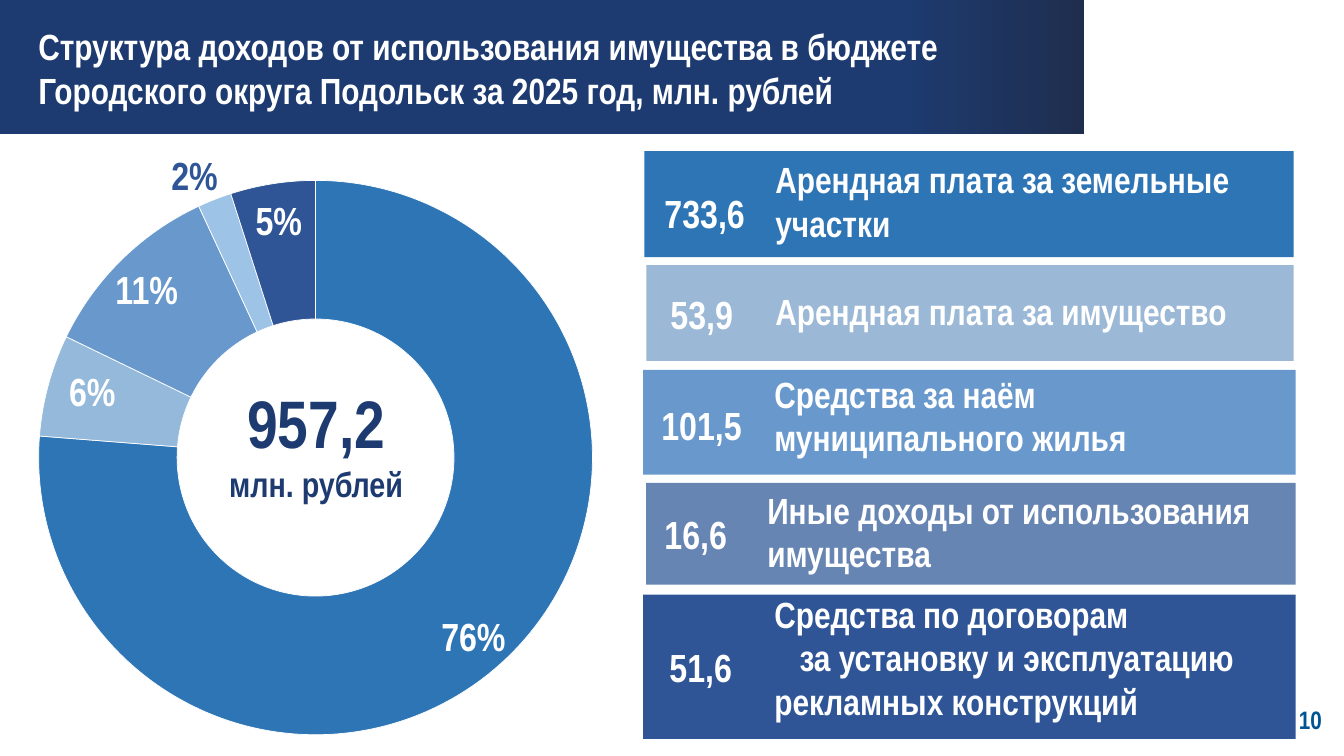
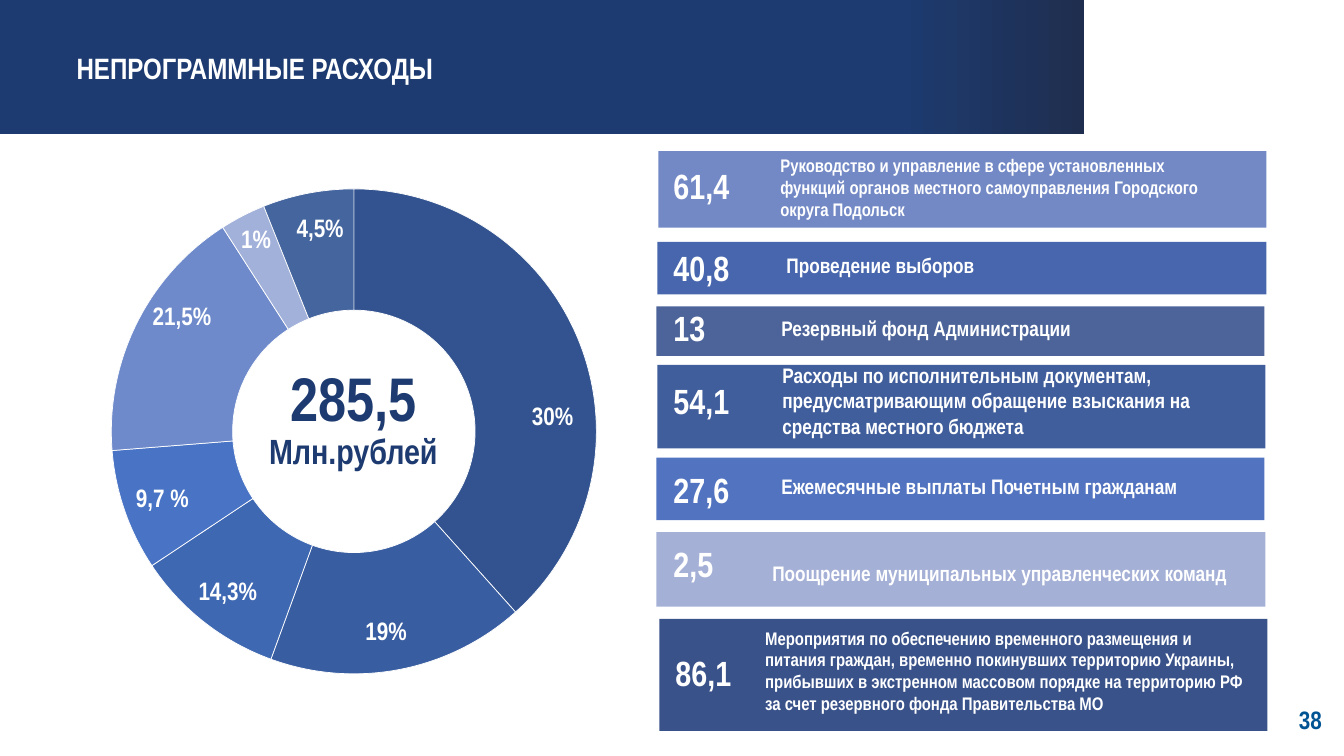
from dataclasses import dataclass

from lxml.etree import SubElement
from pptx import Presentation
from pptx.chart.data import CategoryChartData
from pptx.dml.color import RGBColor
from pptx.enum.chart import XL_CHART_TYPE
from pptx.enum.shapes import MSO_SHAPE
from pptx.enum.text import PP_ALIGN
from pptx.oxml.ns import qn
from pptx.util import Emu, Pt

PX = 9144


@dataclass(frozen=True)
class Theme:
    font: str = "Arial Narrow"
    chart_font: str = "Calibri"
    white: str = "FFFFFF"
    navy: str = "1D3B70"
    band_end: str = "1F2E4F"
    page_number: str = "005493"
    accent: str = "2F5597"
    page_size: int = 18
    unit_size: int = 25
    chart_size: int = 10


THEME = Theme()

INCOME = {
    "page": "10",
    "title": ("Структура доходов от использования имущества в бюджете "
              "Городского округа Подольск за 2025 год, млн. рублей",
              (33, 19, 969, 98), 26),
    "chart_box": (38, 147, 550, 614),
    "plot": (0, 0, 1, 1),
    "slices": [(77, "2E75B6"), (6, "94B9DA"), (11, "6999CC"),
               (2, "9DC3E6"), (5, "2F5597")],
    "total": ("957,2", (146, 373, 335, 91), 48),
    "unit": ("млн. рублей", (146, 454, 335, 52)),
    "share_size": 28,
    "shares": [
        ("76%", (420, 603, 99, 57), THEME.white),
        ("6%", (51, 359, 81, 57), THEME.white),
        ("11%", (97, 258, 97, 57), THEME.white),
        ("2%", (145, 145, 96, 57), THEME.accent),
        ("5%", (236, 190, 81, 57), THEME.white),
    ],
    "value_size": 28,
    "bars": [
        ((639, 150, 644, 105), "2E75B6", "733,6", (654, 183),
         [("Арендная плата за земельные участки", 0)], (764, 151, 517, 98), 26),
        ((641, 263, 642, 95), "9BB8D6", "53,9", (660, 283),
         [("Арендная плата за имущество", 0)], (764, 282, 477, 54), 26),
        ((638, 367, 647, 104), "6999CC", "101,5", (651, 393),
         [("Средства за наём муниципального жилья", 0)], (763, 364, 522, 98), 26),
        ((641, 479, 644, 101), "6685B3", "16,6", (654, 501),
         [("Иные доходы от использования", 0), ("имущества", 0)],
         (756, 479, 565, 98), 26),
        ((638, 590, 647, 143), "2F5597", "51,6", (659, 633),
         [("Средства по договорам", 0),
          ("за установку и эксплуатацию рекламных конструкций", 25)],
         (763, 582, 510, 141), 26),
    ],
}

EXPENSES = {
    "page": "38",
    "title": ("НЕПРОГРАММНЫЕ РАСХОДЫ", (71, 45, 950, 45), 21),
    "chart_box": (108, 185, 486, 486),
    "plot": (0.005, 0.005, 0.99, 0.99),
    "slices": [(38, "32538F"), (17, "385DA1"), (10, "3E68B2"), (8, "4974C5"),
               (17, "6E8ACB"), (3, "A2B1DA"), (6, "45659E")],
    "total": ("285,5", (183, 352, 335, 84), 44),
    "unit": ("Млн.рублей", (183, 421, 335, 49)),
    "share_size": 18,
    "shares": [
        ("30%", (508, 392, 80, 40), THEME.white),
        ("19%", (333, 606, 100, 40), THEME.white),
        ("14,3%", (183, 566, 86, 40), THEME.white),
        ("9,7 %", (121, 474, 80, 40), THEME.white),
        ("21,5%", (108, 293, 145, 40), THEME.white),
        ("1%", (212, 217, 84, 40), THEME.white),
        ("4,5%", (277, 206, 81, 40), THEME.white),
    ],
    "value_size": 25,
    "bars": [
        ((653, 150, 603, 76), "7389C6", "61,4", (663, 158),
         [("Руководство и управление в сфере установленных функций органов "
           "местного самоуправления Городского округа Подольск", 0)],
         (769, 148, 459, 67), 13),
        ((652, 240, 604, 52), "4766AD", "40,8", (663, 240),
         [("Проведение выборов", 0)], (775, 246, 458, 35), 15),
        ((651, 304, 603, 49), "4C649A", "13", (663, 299),
         [("Резервный фонд Администрации", 0)], (770, 308, 448, 39), 15),
        ((652, 362, 603, 83), "405D9C", "54,1", (663, 372),
         [("Расходы по исполнительным документам, предусматривающим "
           "обращение взыскания на средства местного бюджета", 0)],
         (771, 355, 467, 60), 15),
        ((651, 454, 603, 62), "5273BF", "27,6", (663, 460),
         [("Ежемесячные выплаты Почетным гражданам", 0)],
         (770, 465, 474, 38), 15),
        ((651, 528, 604, 74), "A5B0D7", "2,5", (663, 533),
         [("Поощрение муниципальных управленческих команд", 0)],
         (761, 551, 464, 35), 15),
        ((654, 614, 603, 111), "39528A", "86,1", (665, 641),
         [("Мероприятия по обеспечению временного размещения и питания "
           "граждан, временно покинувших территорию Украины, прибывших в "
           "экстренном массовом порядке на территорию РФ за счет резервного "
           "фонда Правительства МО", 0)], (754, 617, 483, 69), 13),
    ],
}


def emu(box):
    return [Emu(length * PX) for length in box]


def color(value):
    return RGBColor.from_string(value)


def add_text(slide, paragraphs, box, size, fill=THEME.white,
             align=PP_ALIGN.LEFT, wrap=True):
    frame = slide.shapes.add_textbox(*emu(box)).text_frame
    frame.word_wrap = wrap
    frame.margin_left = frame.margin_right = Emu(5 * PX)
    frame.margin_top = frame.margin_bottom = Emu(5 * PX)
    for index, (text, indent) in enumerate(paragraphs):
        paragraph = frame.add_paragraph() if index else frame.paragraphs[0]
        paragraph.alignment = align
        if indent:
            paragraph._p.get_or_add_pPr().set("indent", str(indent * PX))
        run = paragraph.add_run()
        run.text = text
        run.font.name = THEME.font
        run.font.size = Pt(size)
        run.font.bold = True
        run.font.color.rgb = color(fill)


def add_rectangle(slide, box):
    shape = slide.shapes.add_shape(MSO_SHAPE.RECTANGLE, *emu(box))
    shape.shadow.inherit = False
    shape.line.fill.background()
    return shape


def add_frame(slide, content):
    band = add_rectangle(slide, (0, 0, 1075, 133))
    band.fill.gradient()
    band.fill.gradient_angle = 0
    stops = ((THEME.navy, 0.83), (THEME.band_end, 1))
    for stop, (value, position) in zip(band.fill.gradient_stops, stops):
        stop.color.rgb = color(value)
        stop.position = position
    title, box, size = content["title"]
    add_text(slide, [(title, 0)], box, size)
    add_text(slide, [(content["page"], 0)], (1282, 694, 34, 39),
             THEME.page_size, THEME.page_number, PP_ALIGN.RIGHT, wrap=False)


def set_plot_layout(chart, plot_box):
    plot_area = chart.element.find(".//" + qn("c:plotArea"))
    for old in plot_area.findall(qn("c:layout")):
        plot_area.remove(old)
    layout = SubElement(plot_area, qn("c:layout"))
    plot_area.insert(0, layout)
    manual = SubElement(layout, qn("c:manualLayout"))
    settings = [("layoutTarget", "inner"), ("xMode", "edge"), ("yMode", "edge")]
    settings += zip("xywh", plot_box)
    for name, value in settings:
        SubElement(manual, qn("c:" + name)).set("val", str(value))
    chart.element.find(".//" + qn("c:holeSize")).set("val", "70")


def add_doughnut(slide, content):
    slices = content["slices"]
    data = CategoryChartData()
    data.categories = [str(number + 1) for number in range(len(slices))]
    data.add_series("Series 1", [value for value, _ in slices])
    chart = slide.shapes.add_chart(
        XL_CHART_TYPE.DOUGHNUT, *emu(content["chart_box"]), data).chart
    chart.has_legend = False
    chart.has_title = False
    chart.font.name = THEME.chart_font
    chart.font.size = Pt(THEME.chart_size)
    chart.font.color.rgb = color(THEME.white)
    plot = chart.plots[0]
    plot.has_data_labels = False
    plot.vary_by_categories = False
    for index, (_, fill) in enumerate(slices):
        style = plot.series[0].points[index].format
        style.fill.solid()
        style.fill.fore_color.rgb = color(fill)
        style.line.color.rgb = color(THEME.white)
        style.line.width = Pt(0.5)
    set_plot_layout(chart, content["plot"])

    total, box, size = content["total"]
    add_text(slide, [(total, 0)], box, size, THEME.navy, PP_ALIGN.CENTER)
    unit, box = content["unit"]
    add_text(slide, [(unit, 0)], box, THEME.unit_size, THEME.navy,
             PP_ALIGN.CENTER)
    for share, box, fill in content["shares"]:
        add_text(slide, [(share, 0)], box, content["share_size"], fill,
                 PP_ALIGN.CENTER)


def add_bars(slide, content):
    for box, fill, value, corner, label, label_box, size in content["bars"]:
        bar = add_rectangle(slide, box)
        bar.fill.solid()
        bar.fill.fore_color.rgb = color(fill)
        add_text(slide, [(value, 0)], (*corner, 100, 54),
                 content["value_size"])
        add_text(slide, label, label_box, size)


def main():
    presentation = Presentation()
    presentation.slide_width, presentation.slide_height = emu((1333, 750))
    for content in (INCOME, EXPENSES):
        slide = presentation.slides.add_slide(presentation.slide_layouts[6])
        add_frame(slide, content)
        add_doughnut(slide, content)
        add_bars(slide, content)
    presentation.save("out.pptx")


if __name__ == "__main__":
    main()
